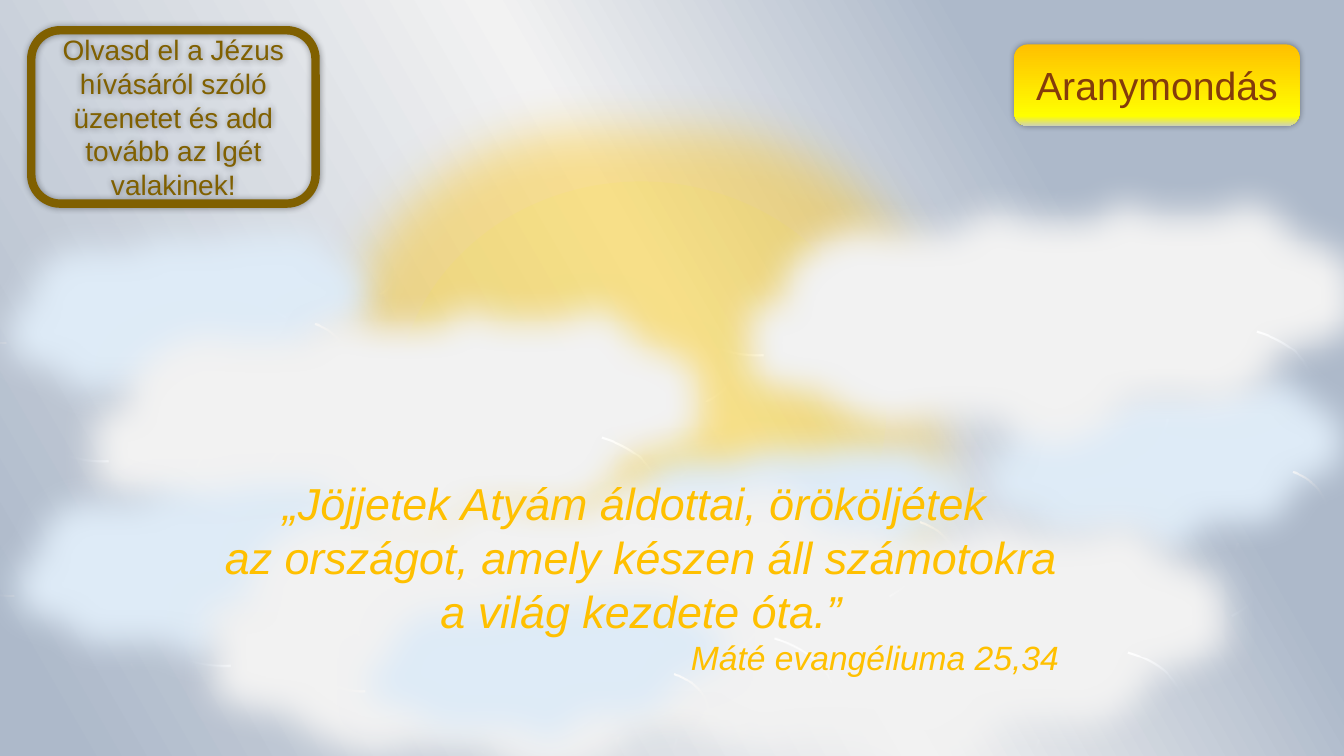
from lxml import etree
from pptx import Presentation, util as u
from pptx.dml.color import RGBColor
from pptx.enum import shapes, text
from pptx.oxml.ns import qn

Inches, Pt = u.Inches, u.Pt
THEME = {
    "font": "Arial",
    "white": "FFFFFF", "cloud": "F2F2F2", "blue_cloud": "DEEBF7",
    "sun": "FFFF00", "gold": "FFC000", "brown": "843C0B", "olive": "806000",
    "shadow": "000000",
    "sky": [(22, "ADB9CA"), (48, "F2F2F2"), (96, "ADB9CA")],
    "button": [(0, "FFC000"), (88, "FFFF00"), (100, "CED2B3"), (100, "CEE1F2")],
    "verse": 32, "source": 24, "title": 28, "task": 20,
}


def add_color(parent, color, alpha=None):
    clr = etree.SubElement(parent, qn("a:srgbClr"), val=color)
    if alpha is not None:
        etree.SubElement(clr, qn("a:alpha"), val=str(alpha * 1000))


def set_gradient(props, stops, angle):
    """Replace the solid fill in props with a linear gradient."""
    grad = etree.Element(qn("a:gradFill"), rotWithShape="1")
    gs_list = etree.SubElement(grad, qn("a:gsLst"))
    for pos, color in stops:
        add_color(etree.SubElement(gs_list, qn("a:gs"), pos=str(pos * 1000)), color)
    etree.SubElement(grad, qn("a:lin"), ang=str(angle * 60000), scaled="0")
    props.replace(props.find(qn("a:solidFill")), grad)


prs = Presentation()
prs.slide_width, prs.slide_height = Inches(13.33), Inches(7.5)
s = prs.slides.add_slide(prs.slide_layouts[6])

# Sky
s.background.fill.solid()
set_gradient(s.background._cSld.bg.bgPr, THEME["sky"], 150)

# Sun with a golden glow
sp = s.shapes.add_shape(shapes.MSO_SHAPE.OVAL, Inches(3.92), Inches(1.8), Inches(4.87), Inches(4.52))
sp.fill.solid()
sp.fill.fore_color.rgb = RGBColor.from_string(THEME["sun"])
clr = sp._element.spPr.find(qn("a:solidFill"))[0]
etree.SubElement(clr, qn("a:alpha"), val="6000")
sp.line.fill.background()
sp.shadow.inherit = False
effects = sp._element.spPr.find(qn("a:effectLst"))
add_color(etree.SubElement(effects, qn("a:glow"), rad=str(Inches(1))), THEME["gold"], 40)

# Soft clouds, from back to front
clouds = [
    ("blue_cloud", -0.43, 1.84, 4.49, 2.57),
    ("cloud", 0.29, 2.66, 7.17, 3.15),
    ("blue_cloud", 5.57, 3.97, 4.49, 2.27),
    ("blue_cloud", -0.35, 4.35, 4.49, 2.57),
    ("blue_cloud", 9.27, 3.31, 4.49, 2.57),
    ("cloud", 5.51, 4.79, 7.17, 3.15),
    ("cloud", 1.43, 4.4, 7.9, 3.63),
    ("blue_cloud", 3.13, 5.48, 4.49, 2.27),
    ("cloud", 6.79, 1.61, 7.17, 3.15),
]
for color, *box in clouds:
    sp = s.shapes.add_shape(shapes.MSO_SHAPE.CLOUD, *map(Inches, box))
    sp.fill.solid()
    sp.fill.fore_color.rgb = RGBColor.from_string(THEME[color])
    sp.line.color.rgb = RGBColor.from_string(THEME["white"])
    sp.line.width = Pt(1.5)
    sp.shadow.inherit = False
    effects = sp._element.spPr.find(qn("a:effectLst"))
    etree.SubElement(effects, qn("a:softEdge"), rad=str(Pt(25)))

# Bible verse
tb = s.shapes.add_textbox(Inches(2.12), Inches(4.67), Inches(8.48), Inches(2.12))
tf = tb.text_frame
tf.word_wrap = True
tf.text = ("„Jöjjetek Atyám áldottai, örököljétek \n"
           "az országot, amely készen áll számotokra \n"
           "a világ kezdete óta.”\n"
           "Máté evangéliuma 25,34")
for p in tf.paragraphs:
    p.alignment = text.PP_ALIGN.CENTER
    f = p.runs[0].font
    f.name, f.size, f.italic = THEME["font"], Pt(THEME["verse"]), True
    f.color.rgb = RGBColor.from_string(THEME["gold"])
p.alignment = text.PP_ALIGN.RIGHT
f.size = Pt(THEME["source"])

# Title button and task frame
boxes = [
    ("Aranymondás", (10.06, 0.44, 2.83, 0.81), "title", "brown", True),
    ("Olvasd el a Jézus hívásáról szóló üzenetet és add tovább az Igét valakinek!",
     (0.31, 0.3, 2.82, 1.72), "task", "olive", False),
]
for words, box, size, color, filled in boxes:
    sp = s.shapes.add_shape(shapes.MSO_SHAPE.ROUNDED_RECTANGLE, *map(Inches, box))
    rgb = RGBColor.from_string(THEME[color])
    if filled:
        sp.fill.solid()
        set_gradient(sp._element.spPr, THEME["button"], 90)
        sp.line.fill.background()
    else:
        sp.fill.background()
        sp.line.color.rgb = rgb
        sp.line.width = Pt(6)
    sp.shadow.inherit = False
    effects = sp._element.spPr.find(qn("a:effectLst"))
    shadow = etree.SubElement(effects, qn("a:outerShdw"), blurRad=str(Pt(5)), dist="0",
                              dir="0", algn="ctr", rotWithShape="0")
    add_color(shadow, THEME["shadow"], 40)
    tf = sp.text_frame
    tf.word_wrap = True
    tf.vertical_anchor = text.MSO_ANCHOR.MIDDLE
    tf.text = words
    p = tf.paragraphs[0]
    p.alignment = text.PP_ALIGN.CENTER
    f = p.runs[0].font
    f.name, f.size = THEME["font"], Pt(THEME[size])
    f.color.rgb = rgb

prs.save("out.pptx")
